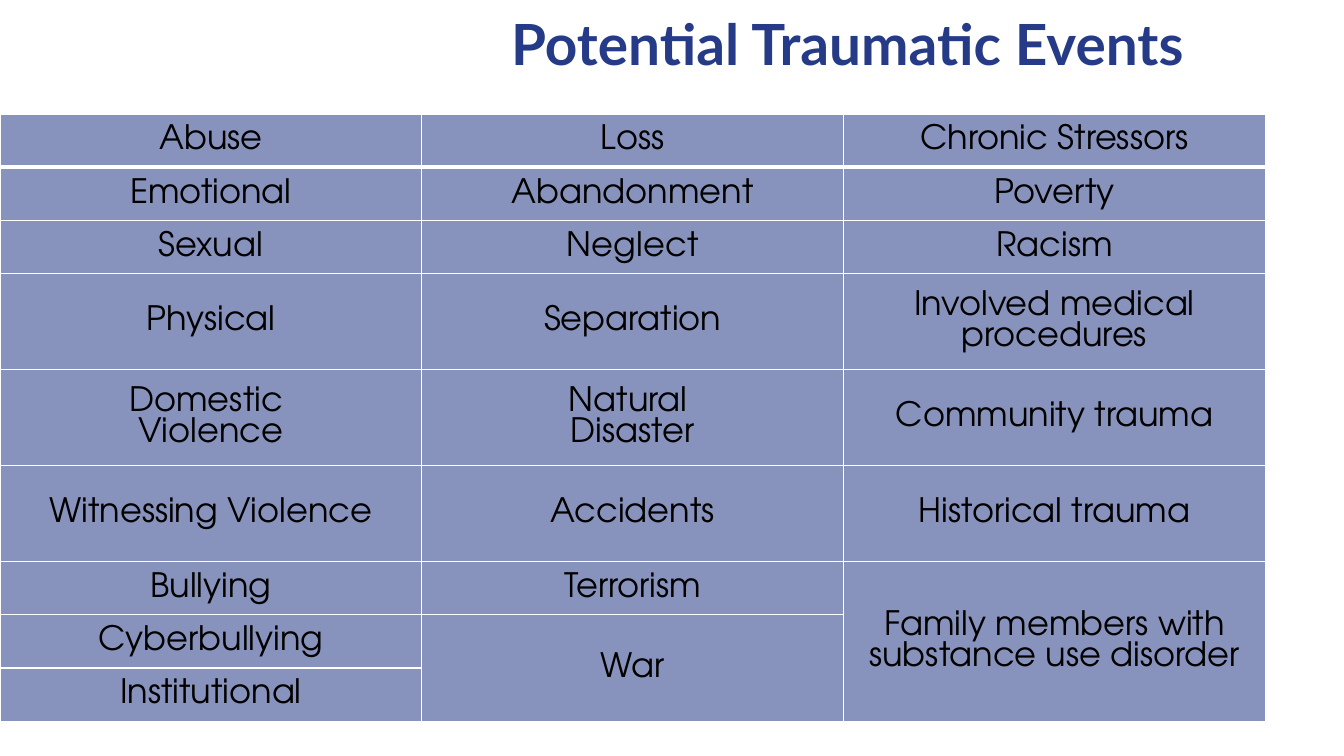
from dataclasses import dataclass

from pptx import Presentation
from pptx.dml.color import RGBColor as Color
from pptx.enum.text import MSO_ANCHOR as Anchor, MSO_AUTO_SIZE as AutoSize, PP_ALIGN as Align
from pptx.oxml import parse_xml
from pptx.oxml.ns import nsdecls
from pptx.util import Inches, Pt


@dataclass(frozen=True)
class Theme:
    title_color: str = "263B88"
    cell_color: str = "263C87"
    cell_opacity: int = 55
    text_color: str = "000000"
    border_color: str = "FFFFFF"
    border_width: int = 1
    header_border_width: int = 3
    title_font: str = "Lato"
    table_font: str = "TeX Gyre Adventor"
    title_size: float = 40.5
    table_size: int = 24


class SlideBuilder:
    """Draw styled elements on a slide, with lengths in percent of its size."""

    def __init__(self, presentation, theme):
        self.width = presentation.slide_width
        self.height = presentation.slide_height
        self.theme = theme
        self.slide = presentation.slides.add_slide(presentation.slide_layouts[5])

    def across(self, percent):
        return round(self.width * percent / 100)

    def down(self, percent):
        return round(self.height * percent / 100)

    def box(self, left, top, width, height):
        return self.across(left), self.down(top), self.across(width), self.down(height)

    def apply(self, target, values):
        for name, value in values.items():
            setattr(target, name, value)

    def fill_text(self, text_frame, text, align, line_spacing, font, color):
        text_frame.text = text
        for paragraph in text_frame.paragraphs:
            self.apply(paragraph, {"alignment": align, "line_spacing": line_spacing})
            for run in paragraph.runs:
                self.apply(run.font, font)
                run.font.color.rgb = Color.from_string(color)

    def title(self, text, left, top, width, height):
        theme, shape = self.theme, self.slide.shapes.title
        shape.left, shape.top, shape.width, shape.height = self.box(left, top, width, height)
        self.apply(shape.text_frame, {"vertical_anchor": Anchor.MIDDLE,
                                      "auto_size": AutoSize.NONE, "word_wrap": True})
        font = {"name": theme.title_font, "size": Pt(theme.title_size), "bold": True}
        self.fill_text(shape.text_frame, text, Align.LEFT, 0.9, font, theme.title_color)

    def table(self, rows, spans, left, top, width, row_heights):
        shape = self.slide.shapes.add_table(
            len(rows), len(rows[0]), *self.box(left, top, width, sum(row_heights)))
        table = shape.table
        self.apply(table, {"first_row": False, "horz_banding": False})
        for row, height in zip(table.rows, row_heights):
            row.height = self.down(height)
        for row_index, texts in enumerate(rows):
            for column_index, text in enumerate(texts):
                self.cell(table.cell(row_index, column_index), text, row_index == 0)
        for first, last in spans:
            table.cell(*first).merge(table.cell(*last))

    def cell(self, cell, text, is_header):
        theme = self.theme
        font = {"name": theme.table_font, "size": Pt(theme.table_size), "bold": False}
        cell.vertical_anchor = Anchor.MIDDLE
        if text:
            self.fill_text(cell.text_frame, text, Align.CENTER, None, font, theme.text_color)
        properties = cell._tc.get_or_add_tcPr()
        for side in "LRTB":
            heavy = is_header and side == "B"
            width = theme.header_border_width if heavy else theme.border_width
            properties.append(parse_xml(
                f'<a:ln{side} {nsdecls("a")} w="{Pt(width)}"><a:solidFill>'
                f'<a:srgbClr val="{theme.border_color}"/></a:solidFill></a:ln{side}>'))
        properties.append(parse_xml(
            f'<a:solidFill {nsdecls("a")}><a:srgbClr val="{theme.cell_color}">'
            f'<a:alpha val="{theme.cell_opacity * 1000}"/></a:srgbClr></a:solidFill>'))


EVENTS = [
    ("Abuse", "Loss", "Chronic Stressors"),
    ("Emotional", "Abandonment", "Poverty"),
    ("Sexual", "Neglect", "Racism"),
    ("Physical", "Separation", "Involved medical procedures"),
    ("Domestic \nViolence", "Natural \nDisaster", "Community trauma"),
    ("Witnessing Violence", "Accidents", "Historical trauma"),
    ("Bullying", "Terrorism", "Family members with substance use disorder"),
    ("Cyberbullying", "War", None),
    ("Institutional", None, None),
]
SPANS = [((6, 2), (8, 2)), ((7, 1), (8, 1))]
SHORT_ROW, TALL_ROW = 7.04, 12.7


def main():
    presentation = Presentation()
    presentation.slide_width = Inches(13.33)
    presentation.slide_height = Inches(7.5)
    builder = SlideBuilder(presentation, Theme())
    builder.title("Potential Traumatic Events", 37.28, 0, 56.04, 12.53)
    row_heights = [SHORT_ROW] * 3 + [TALL_ROW] * 3 + [SHORT_ROW] * 3
    builder.table(EVENTS, SPANS, 0, 15.07, 94.15, row_heights)
    presentation.save("out.pptx")


if __name__ == "__main__":
    main()
